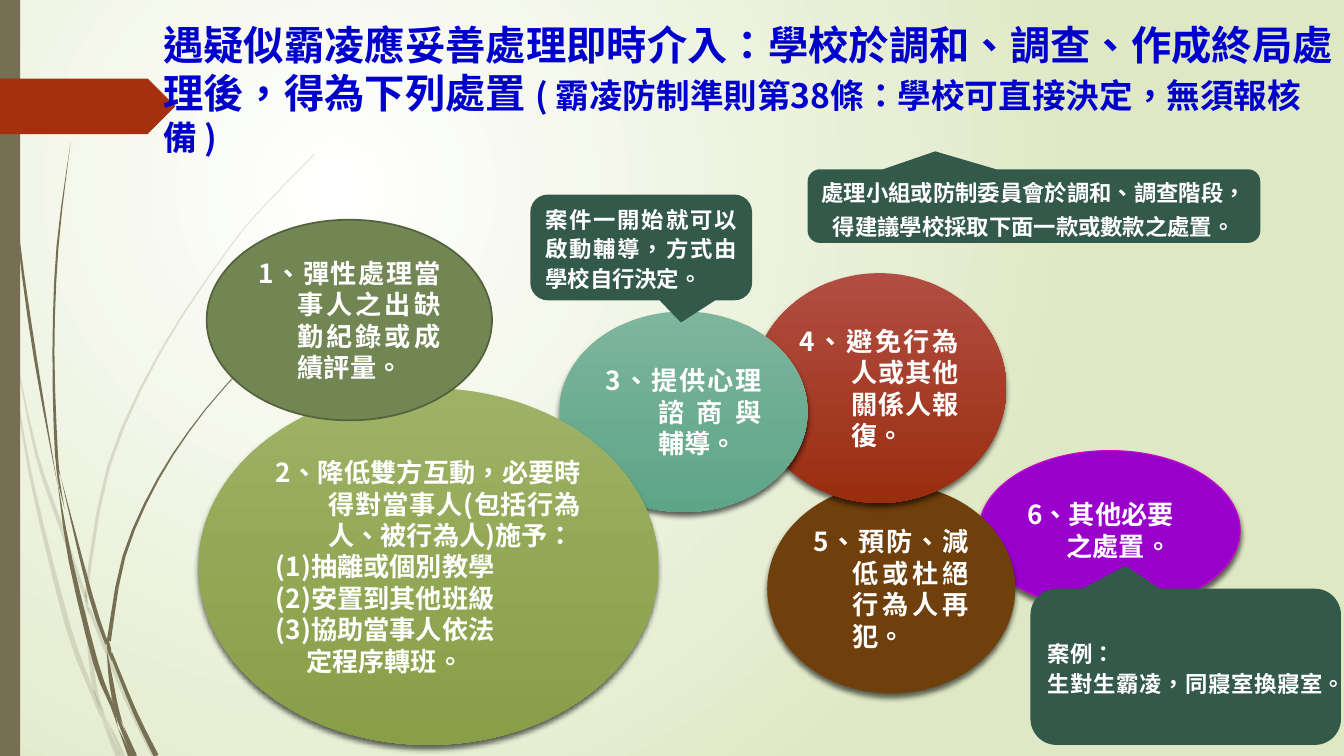
import math
from dataclasses import dataclass

import pptx
import pptx.dml.color
import pptx.enum.shapes
import pptx.enum.text
import pptx.oxml
import pptx.oxml.ns
import pptx.util

Inches = pptx.util.Inches
Pt = pptx.util.Pt
SHAPE = pptx.enum.shapes.MSO_SHAPE
ALIGN = pptx.enum.text.PP_ALIGN
qn = pptx.oxml.ns.qn
DRAWING = 'xmlns:a="http://schemas.openxmlformats.org/drawingml/2006/main"'


@dataclass
class Theme:
    font: str = "Noto Sans CJK SC"
    white: str = "FFFFFF"
    backdrop: str = "DFE8C4"
    title: str = "0000CC"
    stem: str = "766F54"
    tag: str = "A53010"
    callout: str = "325949"
    title_size: float = 28.8
    article_size: float = 24
    measure_size: float = 18.7
    callout_size: float = 16


# Grass blade pieces as (x, y, width) points along the middle
PALE_BLADES = [
    [(0, 2.9, 0.1), (0.06, 3.2, 0.05), (0.11, 3.5, 0)],
    [(0.14, 3.45, 0), (0.36, 4.5, 0.03), (0.6, 5.21, 0.04), (0.85, 5.93, 0.03)],
    [(0.88, 6.03, 0.03), (1.25, 6.93, 0.04), (1.53, 7.5, 0.05)],
    [(1.05, 7.11, 0), (1.22, 7.5, 0.05)],
    [(0.11, 3.5, 0), (0.3, 4.7, 0.03), (0.67, 6.2, 0.05), (0.92, 6.88, 0.04), (1.01, 7.14, 0)],
    [(0.84, 5.99, 0), (0.89, 6.46, 0.04), (0.95, 6.87, 0.04), (1.05, 7.11, 0)],
    [(3.12, 1.53, 0.01), (2.68, 1.98, 0.01), (2.28, 2.45, 0.01), (1.59, 3.49, 0.02),
     (1.08, 4.62, 0.03), (0.86, 5.84, 0.03), (0.88, 5.96, 0)],
    [(1.01, 7.14, 0), (1.17, 7.5, 0.05)],
    [(0.85, 5.86, 0), (0.86, 5.98, 0.03), (0.88, 6.1, 0)],
    [(0.93, 6.83, 0), (1.02, 7.1, 0.03), (1.19, 7.5, 0)],
]
DARK_BLADES = [
    [(0.04, 0, 0.01), (0.08, 1.1, 0.01), (0.18, 2.33, 0.02), (0.35, 3.55, 0.03), (0.57, 4.81, 0)],
    [(0.6, 4.72, 0), (0.9, 5.91, 0.04), (1.06, 6.39, 0.03)],
    [(1.1, 6.48, 0.03), (1.34, 7.07, 0.04), (1.55, 7.5, 0.05)],
    [(0.57, 4.77, 0), (0.7, 5.56, 0.04), (0.95, 6.58, 0.05), (1.11, 7, 0.03), (1.17, 7.22, 0)],
    [(0.7, 1.41, 0), (0.57, 2.45, 0.02), (0.53, 3.49, 0.02), (0.56, 4.51, 0.03), (0.6, 4.72, 0)],
    [(1.22, 7.19, 0), (1.34, 7.5, 0.04)],
    [(0.55, 4.49, 0), (0.58, 4.75, 0.02), (0.64, 5.05, 0)],
    [(2.6, 3.44, 0.01), (2.04, 4.06, 0.01), (1.57, 4.75, 0.02), (1.23, 5.52, 0.03),
     (1.08, 6.36, 0.04)],
    [(1.17, 7.22, 0), (1.29, 7.5, 0.04)],
    [(1.06, 6.45, 0), (1.1, 6.74, 0.04), (1.15, 7, 0.04), (1.22, 7.19, 0)],
    [(1.06, 6.31, 0), (1.08, 6.43, 0.04), (1.11, 6.56, 0)],
    [(1.1, 6.91, 0), (1.18, 7.15, 0.03), (1.32, 7.5, 0.03)],
]


def rgb(code):
    return pptx.dml.color.RGBColor.from_string(code)


def smooth(points, steps=3):
    """Return points on a Catmull-Rom curve through the given tuples."""
    padded = [points[0], *points, points[-1]]
    curve = []
    for a, b, c, d in zip(padded, padded[1:], padded[2:], padded[3:]):
        for t in (step / steps for step in range(steps)):
            curve.append([
                (2 * q + (r - p) * t + (2 * p - 5 * q + 4 * r - s) * t**2
                 + (3 * q - p - 3 * r + s) * t**3) / 2
                for p, q, r, s in zip(a, b, c, d)])
    return curve + [points[-1]]


class SlideBuilder:
    def __init__(self, slide, theme):
        self.slide, self.theme = slide, theme

    def gradient(self, fill, first, last):
        fill.gradient()
        for stop, code, position in zip(fill.gradient_stops, (first, last), (0, 1)):
            stop.color.rgb = rgb(code)
            stop.position = position

    def background(self):
        self.gradient(self.slide.background.fill, self.theme.white, self.theme.backdrop)
        linear = next(self.slide.background._cSld.iter(qn("a:lin")))
        linear.getparent().replace(linear, pptx.oxml.parse_xml(
            f'<a:path {DRAWING} path="circle"><a:fillToRect l="50000" t="50000" '
            'r="100000" b="100000"/></a:path>'))

    def paint(self, shape, colours, line=None):
        """Fill with one colour, or with a pair as a downward gradient."""
        shape.shadow.inherit = False
        if isinstance(colours, tuple):
            self.gradient(shape.fill, *colours)
            shape.fill.gradient_angle = 270
        else:
            shape.fill.solid()
            shape.fill.fore_color.rgb = rgb(colours)
        if line:
            shape.line.color.rgb = rgb(line[0])
            shape.line.width = Pt(line[1])
        else:
            shape.line.fill.background()

    def shape(self, kind, place, colours, line=None):
        shape = self.slide.shapes.add_shape(kind, *map(Inches, place))
        self.paint(shape, colours, line)
        shape.text_frame.word_wrap = True
        shape.text_frame.vertical_anchor = pptx.enum.text.MSO_ANCHOR.MIDDLE
        return shape

    def blade(self, points, opacity):
        curve = smooth(points)
        left, right = [], []
        for index, (x, y, width) in enumerate(curve):
            before, after = curve[max(index - 1, 0)], curve[min(index + 1, len(curve) - 1)]
            dx, dy = after[0] - before[0], after[1] - before[1]
            half = width / 2 / math.hypot(dx, dy)
            left.append((Inches(x + dy * half), Inches(y - dx * half)))
            right.append((Inches(x - dy * half), Inches(y + dx * half)))
        outline = left + right[::-1]
        builder = self.slide.shapes.build_freeform(*outline[0], scale=1.0)
        builder.add_line_segments(outline[1:], close=True)
        blade = builder.convert_to_shape()
        self.paint(blade, self.theme.stem)
        if opacity < 100:
            colour = blade._element.spPr.find(qn("a:solidFill"))[0]
            colour.append(pptx.oxml.parse_xml(f'<a:alpha {DRAWING} val="{opacity * 1000}"/>'))

    def paragraph(self, frame, text, size, colour, align, left=0, hanging=0):
        first = frame.paragraphs[0]
        para = frame.add_paragraph() if first.runs else first
        para.alignment = align
        properties = para._p.get_or_add_pPr()
        properties.set("marL", str(Inches(left)))
        properties.set("indent", str(Inches(-hanging)))
        font = para.font
        font.name, font.size, font.bold = self.theme.font, Pt(size), True
        font.color.rgb = rgb(colour)
        font._element.find(qn("a:latin")).addnext(
            pptx.oxml.parse_xml(f'<a:ea {DRAWING} typeface="{self.theme.font}"/>'))
        self.span(para, text)
        return para

    def span(self, para, text):
        span = para.add_run()
        span.text = text
        span._r.get_or_add_rPr().set("lang", "zh-TW")
        return span

    def title(self, place, heading, article):
        box = self.slide.shapes.add_textbox(*map(Inches, place))
        box.text_frame.word_wrap = True
        para = self.paragraph(box.text_frame, heading, self.theme.title_size,
                              self.theme.title, ALIGN.LEFT)
        self.span(para, article).font.size = Pt(self.theme.article_size)

    def measure(self, place, colours, hanging, text, line=None, shadow=True,
                align=ALIGN.JUSTIFY, details=()):
        """Draw an oval with a numbered measure; details are (text, indent) pairs."""
        oval = self.shape(SHAPE.OVAL, place, colours, line)
        if shadow:
            oval._element.spPr.find(qn("a:effectLst")).append(pptx.oxml.parse_xml(
                f'<a:outerShdw {DRAWING} blurRad="{Pt(4)}" dist="{Pt(3)}" dir="5400000" '
                'rotWithShape="0"><a:srgbClr val="000000"><a:alpha val="60000"/>'
                '</a:srgbClr></a:outerShdw>'))
        style = (self.theme.measure_size, self.theme.white, align)
        self.paragraph(oval.text_frame, text, *style, hanging, hanging)
        for detail, indent in details:
            self.paragraph(oval.text_frame, detail, *style, indent)

    def callout(self, place, tip, lines, spacing=21.3, align=ALIGN.JUSTIFY):
        box = self.shape(SHAPE.ROUNDED_RECTANGULAR_CALLOUT, place, self.theme.callout)
        for index, value in enumerate((*tip, 0.167)):
            box.adjustments[index] = value
        for line in lines:
            para = self.paragraph(box.text_frame, line, self.theme.callout_size,
                                  self.theme.white, align)
            para.line_spacing = Pt(spacing)


def main():
    deck = pptx.Presentation()
    deck.slide_width, deck.slide_height = Inches(13.33), Inches(7.5)
    theme = Theme()
    page = SlideBuilder(deck.slides.add_slide(deck.slide_layouts[6]), theme)
    page.background()
    for blades, opacity in ((PALE_BLADES, 20), (DARK_BLADES, 100)):
        for points in blades:
            page.blade(points, opacity)
    page.shape(SHAPE.RECTANGLE, (0, 0, 0.2, 7.5), theme.stem)
    page.shape(SHAPE.PENTAGON, (0, 0.78, 1.74, 0.55), theme.tag)
    page.measure((9.71, 4.47, 2.59, 1.58), "9900CC", 0.39, "6、其他必要之處置。",
                 line=("CC00CC", 0.75), align=ALIGN.LEFT)
    page.measure((7.61, 4.8, 2.46, 2.08), "6F3F0C", 0.39, "5、預防、減低或杜絕行為人再犯。")
    page.measure((7.46, 2.71, 2.52, 2.28), ("B14E43", "9A2D0F"), 0.52,
                 "4、避免行為人或其他關係人報復。")
    page.measure((5.55, 3.09, 2.46, 1.99), ("7DB59D", "5EA588"), 0.52, "3、提供心理諮商與輔導。")
    page.title((1.52, 0.15, 11.81, 1.44),
               "遇疑似霸凌應妥善處理即時介入：學校於調和、調查、作成終局處理後，得為下列處置 ",
               "( 霸凌防制準則第38條：學校可直接決定，無須報核備 )")
    page.measure((1.97, 3.85, 4.56, 3.54), ("9DB265", "889E47"), 0.52,
                 "2、降低雙方互動，必要時得對當事人(包括行為人、被行為人)施予：",
                 details=[("(1)抽離或個別教學", 0), ("(2)安置到其他班級", 0),
                          ("(3)協助當事人依法", 0), ("定程序轉班。", 0.3)])
    page.measure((2.05, 2.18, 2.83, 1.99), "728653", 0.39,
                 "1、彈性處理當事人之出缺勤紀錄或成績評量。", line=("54633D", 1.25), shadow=False)
    page.callout((8.01, 1.68, 4.49, 0.73), (-0.218, -0.744),
                 ["處理小組或防制委員會於調和、調查階段，", "得建議學校採取下面一款或數款之處置。"],
                 24, ALIGN.CENTER)
    page.callout((10.22, 5.84, 3.08, 1.55), (-0.193, -0.647),
                 ["案例：", "生對生霸凌，同寢室換寢室。"])
    page.callout((5.26, 1.93, 2.2, 1.05), (0.179, 0.709),
                 ["案件一開始就可以啟動輔導，方式由學校自行決定。"])
    deck.save("out.pptx")


if __name__ == "__main__":
    main()
